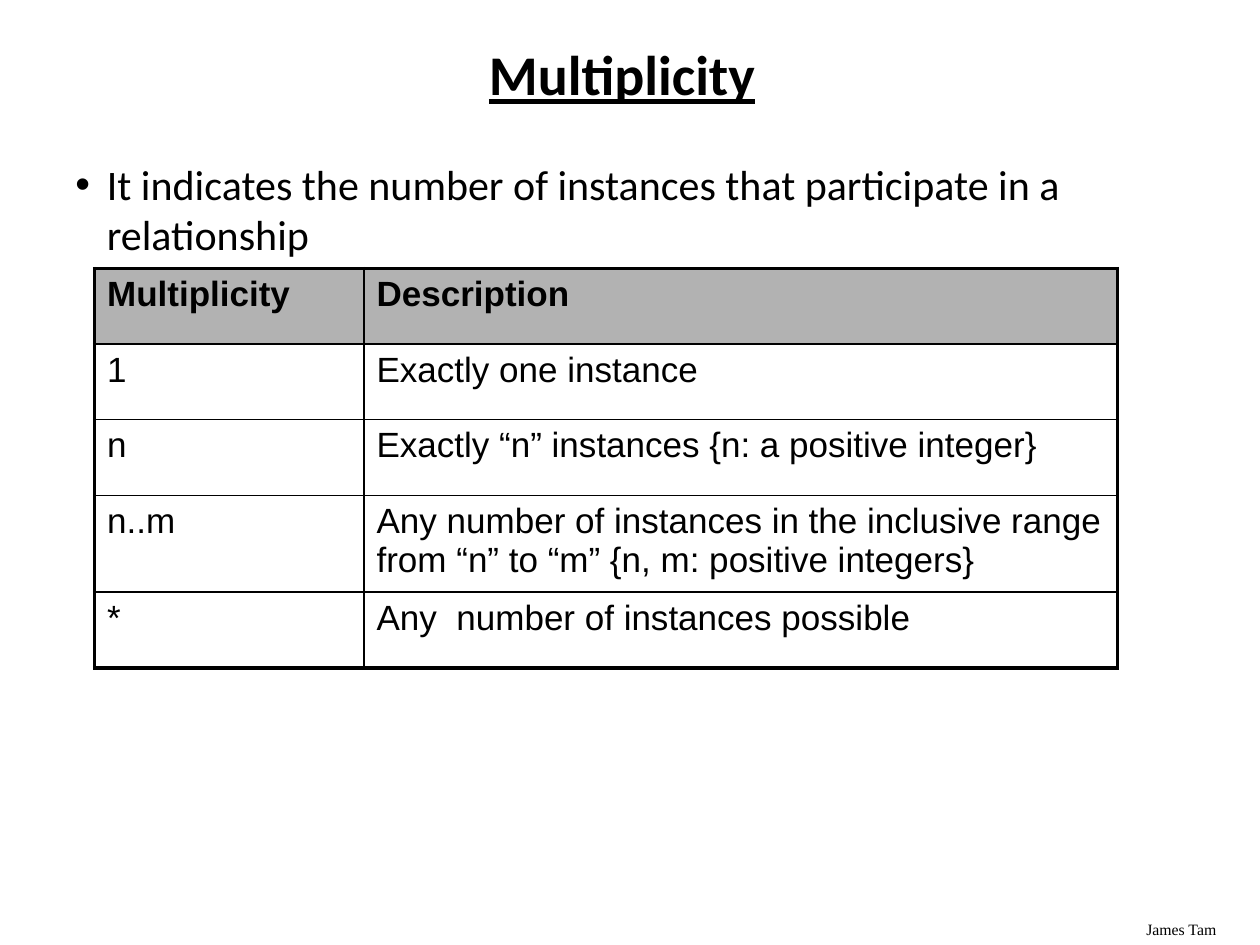
from lxml import etree
from pptx import Presentation
from pptx import util as u
from pptx.dml.color import RGBColor
from pptx.enum import text as t
from pptx.oxml import ns

Pt = u.Pt
HEX = {"ink": "000000", "head": "B2B2B2"}
THIN, THICK = 1, 2.25
COLS = [154, 430.5]
ROWS = [43.2, 43.2, 43.2, 55.4, 43.2]
CELLS = [
    ("Multiplicity", "Description"),
    ("1", "Exactly one instance"),
    ("n", "Exactly “n” instances {n: a positive integer}"),
    ("n..m", "Any number of instances in the inclusive range "
             "from “n” to “m” {n, m: positive integers}"),
    ("*", "Any  number of instances possible"),
]


def color(name):
    return RGBColor.from_string(HEX[name])


def sub(parent, tag, **attrs):
    node = etree.SubElement(parent, ns.qn(tag))
    for key, val in attrs.items():
        node.set(key, str(val))
    return node


def add_run(para, words, face, size, bold=False, line=False):
    run = para.add_run()
    run.text = words
    font = run.font
    font.name, font.size = face, Pt(size)
    font.bold, font.underline = bold, line
    font.color.rgb = color("ink")


def add_box(slide, x, y, w, h, anchor=t.MSO_ANCHOR.TOP):
    frame = slide.shapes.add_textbox(Pt(x), Pt(y), Pt(w), Pt(h)).text_frame
    frame.word_wrap = True
    frame.vertical_anchor = anchor
    return frame.paragraphs[0]


def add_bullet(para, indent):
    props = para._p.get_or_add_pPr()
    props.set("marL", str(Pt(indent)))
    props.set("indent", str(-Pt(indent)))
    sub(props, "a:buFont", typeface="Arial")
    sub(props, "a:buChar", char="•")


def add_edge(cell, side, width):
    edge = sub(cell._tc.get_or_add_tcPr(), "a:ln" + side, w=Pt(width))
    sub(sub(edge, "a:solidFill"), "a:srgbClr", val=HEX["ink"])


def fill_cell(cell, words, row, col):
    # Outer edges are thick, inner ones thin
    outer = {"L": col == 0, "R": col == len(COLS) - 1,
             "T": row == 0, "B": row == len(ROWS) - 1}
    for side, thick in outer.items():
        add_edge(cell, side, THICK if thick else THIN)
    if row == 0:
        cell.fill.solid()
        cell.fill.fore_color.rgb = color("head")
    else:
        cell.fill.background()
    add_run(cell.text_frame.paragraphs[0], words, "Arial", 20, bold=row == 0)


def add_grid(slide, x, y):
    shape = slide.shapes.add_table(len(ROWS), len(COLS), Pt(x), Pt(y),
                                   Pt(sum(COLS)), Pt(sum(ROWS)))
    grid = shape.table
    grid.first_row = grid.horz_banding = False
    for col, width in zip(grid.columns, COLS):
        col.width = Pt(width)
    for r, (row, high) in enumerate(zip(grid.rows, ROWS)):
        row.height = Pt(high)
        for c, words in enumerate(CELLS[r]):
            fill_cell(grid.cell(r, c), words, r, c)


def main():
    deck = Presentation()
    deck.slide_width, deck.slide_height = Pt(720), Pt(540)
    slide = deck.slides.add_slide(deck.slide_layouts[6])

    # Author mark
    author = add_box(slide, 648, 522, 72, 18)
    add_run(author, "James Tam", "Times New Roman", 9)

    # Title
    title = add_box(slide, 34, 24, 643, 41, t.MSO_ANCHOR.MIDDLE)
    title.alignment = t.PP_ALIGN.CENTER
    title.line_spacing = 0.9
    add_run(title, "Multiplicity", "Calibri", 32, bold=True, line=True)

    # Body
    body = add_box(slide, 36, 87, 644, 423)
    add_bullet(body, 18)
    add_run(body, "It indicates the number of instances that participate "
                  "in a relationship", "Calibri", 24)

    # Table of multiplicities
    add_grid(slide, 54, 153.4)
    deck.save("out.pptx")


if __name__ == "__main__":
    main()
